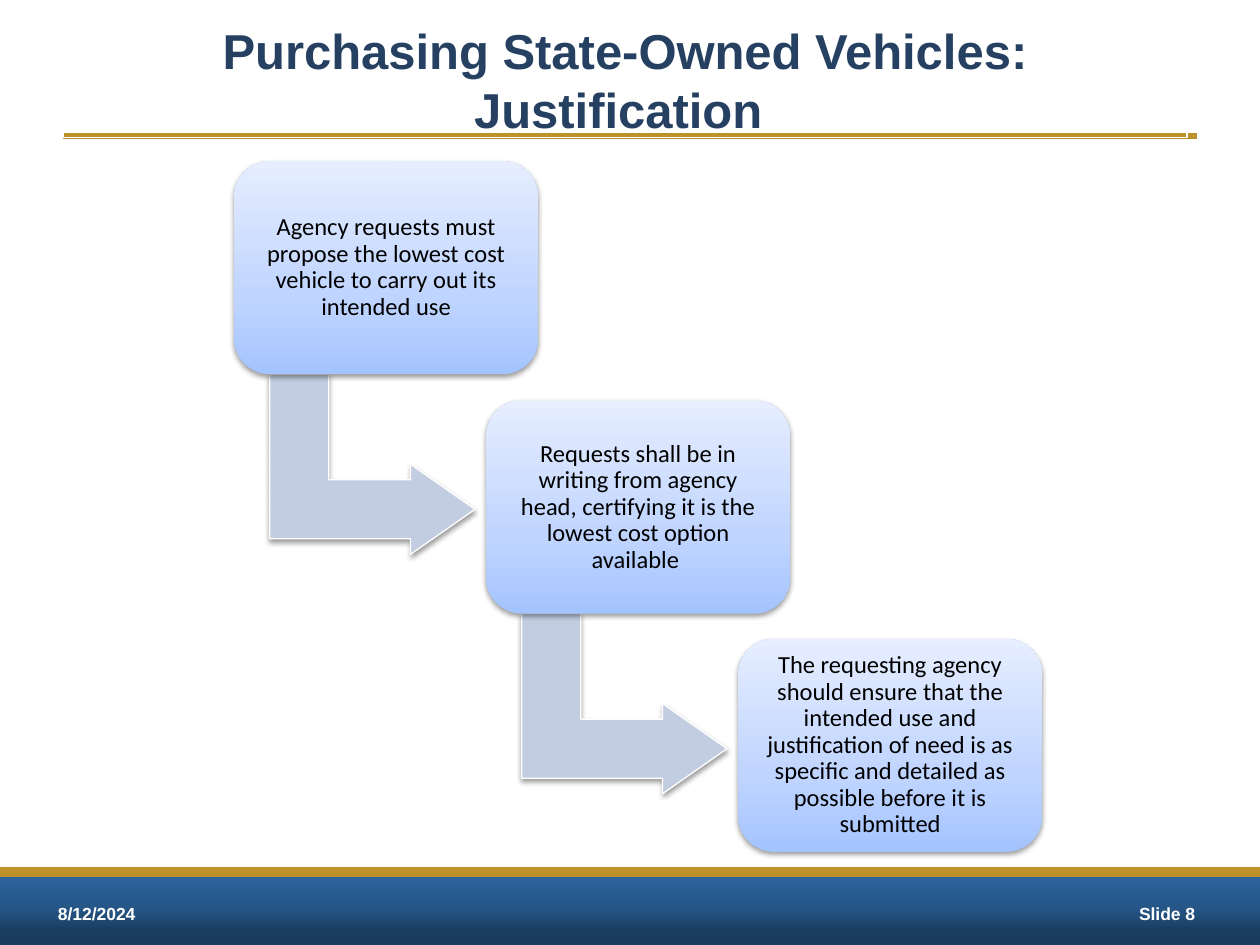
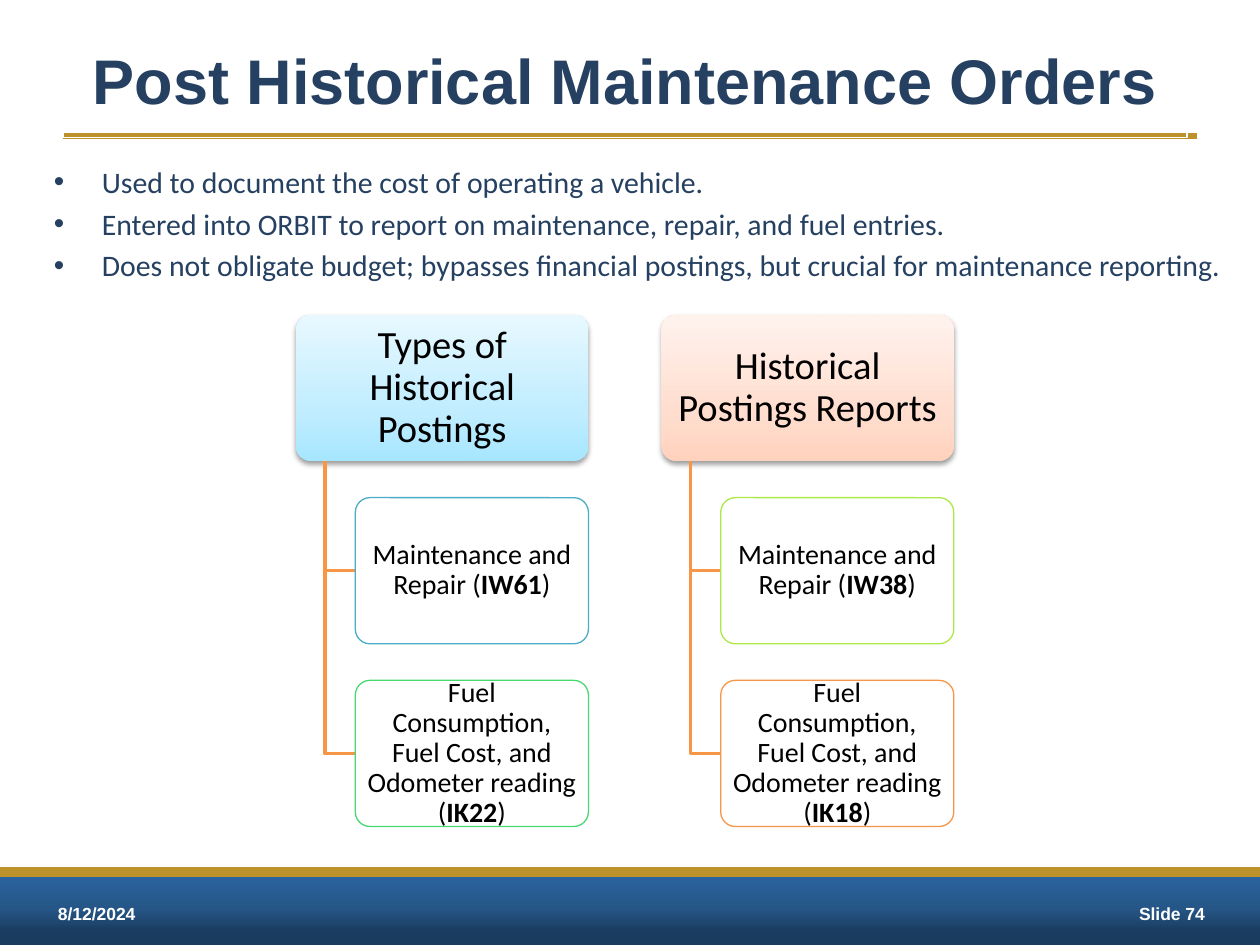
from lxml import etree
from pptx import Presentation
from pptx import util as u
from pptx.dml.color import RGBColor
from pptx.enum import shapes, text
from pptx.oxml.ns import qn

SCALE = 9144
NAVY, GOLD, WHITE, BLACK, ORANGE = "254061", "BD922A", "FFFFFF", "000000", "F79646"
ARROW_GREY = "C2CDE1"
BAND = [(18, "1A3C5F"), (50, "255687"), (100, "2B66A1")]
BLUE = [(0, "A4C4FF"), (35, "BFD4FF"), (100, "E6EEFF")]
CYAN = [(0, "A7E6FF"), (35, "C1EDFF"), (100, "E7F8FF")]
PEACH = [(0, "FFD2BD"), (35, "FFDED0"), (100, "FFF2ED")]
CENTER, LEFT = text.PP_ALIGN.CENTER, text.PP_ALIGN.LEFT
MIDDLE, TOP = text.MSO_ANCHOR.MIDDLE, text.MSO_ANCHOR.TOP
ROUND, BENT = shapes.MSO_SHAPE.ROUNDED_RECTANGLE, shapes.MSO_SHAPE.BENT_UP_ARROW


def px(n):
    return u.Emu(n * SCALE)


def rgb(value):
    return RGBColor.from_string(value)


def sub(parent, tag, **attrs):
    return etree.SubElement(parent, qn(tag), {k: str(v) for k, v in attrs.items()})


class Deck:
    def __init__(self):
        self.prs = Presentation()
        self.prs.slide_width, self.prs.slide_height = px(1000), px(750)
        self.slide = None

    def new_slide(self, title, size, number):
        self.slide = self.prs.slides.add_slide(self.prs.slide_layouts[6])
        self.rule(50, 108, 950, 3)
        self.shape(shapes.MSO_SHAPE.RECTANGLE, (0, 692, 1000, 58), BAND)
        for x, label in ((46, "8/12/2024"), (904, number)):
            self.text_box((x, 704, 90, 42), [label], name="Arial", size=10,
                          bold=True, color=WHITE, anchor=MIDDLE, inset=(0, 0))
        self.rule(0, 692, 1000, 6)
        sp = self.text_box((50, 17, 892, 92), [title], name="Arial", size=size,
                           bold=True, align=CENTER, anchor=MIDDLE)
        self.outline(sp, WHITE, 0.75)

    def outline(self, sp, color, width):
        sp.line.color.rgb = rgb(color)
        sp.line.width = u.Pt(width)

    def rule(self, x1, y, x2, width):
        line = self.slide.shapes.add_connector(
            shapes.MSO_CONNECTOR.STRAIGHT, px(x1), px(y), px(x2), px(y))
        self.outline(line, GOLD, width)
        sub(line._element.spPr, "a:effectLst")

    def gradient(self, sp, stops):
        sp.fill.gradient()
        grad = sp._element.spPr.find(qn("a:gradFill"))
        for child in list(grad):
            grad.remove(child)
        gs_list = sub(grad, "a:gsLst")
        for pos, color in stops:
            sub(sub(gs_list, "a:gs", pos=pos * 1000), "a:srgbClr", val=color)
        sub(grad, "a:lin", ang=16200000, scaled=0)

    def shadow(self, sp):
        effects = sp._element.spPr.find(qn("a:effectLst"))
        outer = sub(effects, "a:outerShdw", blurRad=u.Pt(3.1), dist=u.Pt(1.6),
                    dir=5400000, rotWithShape=0)
        sub(sub(outer, "a:srgbClr", val=BLACK), "a:alpha", val=38000)

    def shape(self, kind, box, fill, line=None, adj=(), rotation=0, shadow=False):
        sp = self.slide.shapes.add_shape(kind, *map(px, box))
        sp.shadow.inherit = False
        sp.rotation = rotation
        for i, value in enumerate(adj):
            sp.adjustments[i] = value
        if isinstance(fill, str):
            sp.fill.solid()
            sp.fill.fore_color.rgb = rgb(fill)
        else:
            self.gradient(sp, fill)
        if line:
            self.outline(sp, line, 0.75)
        else:
            sp.line.fill.background()
        if shadow:
            self.shadow(sp)
        return sp

    def set_text(self, sp, lines, name="Calibri", size=14, bold=False, color=NAVY,
                 align=LEFT, anchor=TOP, inset=(10, 5), **para):
        tf = sp.text_frame
        dx, dy = map(px, inset)
        frame = dict(word_wrap=True, vertical_anchor=anchor, margin_left=dx,
                     margin_right=dx, margin_top=dy, margin_bottom=dy)
        for key, value in frame.items():
            setattr(tf, key, value)
        for i, line in enumerate(lines):
            p = tf.add_paragraph() if i else tf.paragraphs[0]
            for key, value in dict(para, alignment=align).items():
                setattr(p, key, value)
            for j, row in enumerate(line.split("\n")):
                if j:
                    p.add_line_break()
                for k, part in enumerate(row.split("*")):
                    r = p.add_run()
                    r.text = part
                    font = dict(name=name, size=u.Pt(size), bold=bold or k % 2 == 1)
                    for key, value in font.items():
                        setattr(r.font, key, value)
                    r.font.color.rgb = rgb(color)

    def text_box(self, box, lines, **style):
        sp = self.slide.shapes.add_textbox(*map(px, box))
        self.set_text(sp, lines, **style)
        return sp

    def bullets(self, box, lines, size):
        sp = self.text_box(box, lines, size=size, space_before=u.Pt(size * 0.2))
        for p in sp.text_frame.paragraphs:
            ppr = p._p.get_or_add_pPr()
            ppr.set("marL", str(px(38)))
            ppr.set("indent", str(px(-38)))
            sub(ppr, "a:buFont", typeface="Arial")
            sub(ppr, "a:buChar", char="•")

    def card(self, box, label, size, fill, inset, radius, line=None):
        sp = self.shape(ROUND, box, fill, line, (radius,), shadow=line is None)
        self.set_text(sp, [label], size=size, color=BLACK, align=CENTER,
                      anchor=MIDDLE, inset=inset, line_spacing=0.9)

    def elbow(self, x, y, width, height):
        builder = self.slide.shapes.build_freeform(px(x), px(y))
        builder.add_line_segments(
            [(px(x), px(y + height)), (px(x + width), px(y + height))], close=False)
        sp = builder.convert_to_shape()
        sp.shadow.inherit = False
        sp.fill.background()
        self.outline(sp, ORANGE, 2)


def justification(deck):
    deck.new_slide("Purchasing State-Owned Vehicles:\nJustification ", 28, "Slide 8")
    steps = [
        "Agency requests must propose the lowest cost vehicle to carry out its intended use",
        "Requests shall be in writing from agency head, certifying it is the lowest "
        "cost option available ",
        "The requesting agency should ensure that the intended use and justification of "
        "need is as specific and detailed as possible before it is submitted",
    ]
    for i, step in enumerate(steps):
        left, top = 186 + 200 * i, 128 + round(189.5 * i)
        if i < len(steps) - 1:
            deck.shape(BENT, (left + 38, top + 159, 143, 163), ARROW_GREY, WHITE,
                       (0.328, 0.25, 0.358), rotation=90, shadow=True)
        deck.card((left, top, 241, 169), step, 14, BLUE, (14, 14), 0.167)


def maintenance_orders(deck):
    deck.new_slide("Post Historical Maintenance Orders", 36, "Slide 74")
    deck.bullets((33, 125, 950, 108), [
        "Used to document the cost of operating a vehicle.",
        "Entered into ORBIT to report on maintenance, repair, and fuel entries.",
        "Does not obligate budget; bypasses financial postings, but crucial for "
        "maintenance reporting.",
    ], 17)
    tasks = ["Maintenance and Repair (*{}*)",
             "Fuel Consumption, Fuel Cost, and Odometer reading (*{}*)"]
    groups = [
        ("Types of Historical Postings", CYAN, [("IW61", "4BACC6"), ("IK22", "47D872")]),
        ("Historical Postings Reports", PEACH, [("IW38", "ACE946"), ("IK18", ORANGE)]),
    ]
    top, height, pitch = 250, 116, 145
    for col, (heading, fill, codes) in enumerate(groups):
        left = 235 + 290 * col
        deck.card((left, top, 232, height), heading, 22, fill, (9, 6), 0.1)
        for row, (task, (code, line)) in enumerate(zip(tasks, codes), 1):
            y = top + pitch * row
            deck.elbow(left + 23, top + height, 24, y + height // 2 - top - height)
            deck.card((left + 47, y, 185, height), task.format(code), 16, WHITE,
                      (6, 5), 0.1, line)


def main():
    deck = Deck()
    justification(deck)
    maintenance_orders(deck)
    deck.prs.save("out.pptx")


if __name__ == "__main__":
    main()
